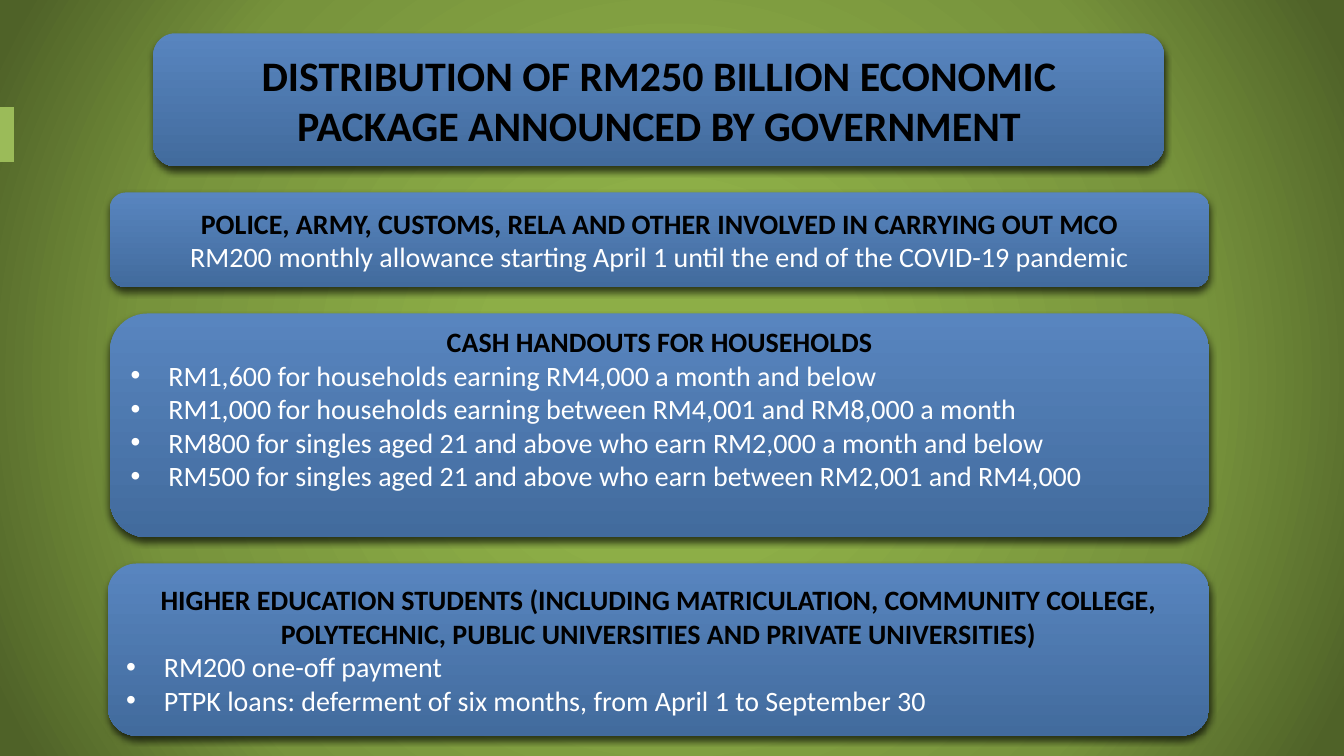
from pptx import Presentation
from pptx.dml.color import RGBColor
from pptx.enum.shapes import MSO_CONNECTOR, MSO_SHAPE
from pptx.enum.text import MSO_ANCHOR, MSO_AUTO_SIZE, PP_ALIGN
from pptx.oxml import parse_xml
from pptx.oxml.ns import nsdecls
from pptx.oxml.xmlchemy import OxmlElement
from pptx.util import Cm, Pt

FONT = "Calibri"
BLACK, WHITE = "000000", "FFFFFF"
PANEL_TOP, PANEL_BOTTOM = "5885BF", "426B9D"
ACCENT = "9BBB59"
GLOW = [(0, "8DAE47"), (23, "8DAE47"), (69, "77933C"), (97, "4F6228")]


def rgb(hex_code):
    return RGBColor.from_string(hex_code)


def paint_background(slide, stops):
    """Fill the slide with a circular gradient spreading from its centre."""
    stop_xml = "".join(
        f'<a:gs pos="{percent * 1000}"><a:srgbClr val="{colour}"/></a:gs>'
        for percent, colour in stops
    )
    slide.element.cSld.insert(0, parse_xml(
        f'<p:bg {nsdecls("p", "a")}><p:bgPr><a:gradFill rotWithShape="1">'
        f'<a:gsLst>{stop_xml}</a:gsLst><a:path path="circle">'
        '<a:fillToRect l="50000" t="50000" r="50000" b="50000"/></a:path>'
        '</a:gradFill><a:effectLst/></p:bgPr></p:bg>'
    ))


def cast_shadow(shape):
    shape.shadow.inherit = False
    effects = shape.element.spPr.find(
        "{http://schemas.openxmlformats.org/drawingml/2006/main}effectLst")
    effects.append(parse_xml(
        f'<a:outerShdw {nsdecls("a")} blurRad="{Pt(5)}" dist="{Pt(3)}" '
        'dir="5400000" rotWithShape="0"><a:srgbClr val="000000">'
        '<a:alpha val="65000"/></a:srgbClr></a:outerShdw>'
    ))


def add_panel(slide, left, top, width, height):
    panel = slide.shapes.add_shape(
        MSO_SHAPE.ROUNDED_RECTANGLE, Cm(left), Cm(top), Cm(width), Cm(height))
    panel.fill.gradient()
    panel.fill.gradient_angle = 270
    for stop, colour in zip(panel.fill.gradient_stops, (PANEL_TOP, PANEL_BOTTOM)):
        stop.color.rgb = rgb(colour)
    panel.line.fill.background()
    cast_shadow(panel)
    return panel


def add_run(paragraph, text, size, colour, bold=False):
    run = paragraph.add_run()
    run.text = text
    run.font.name = FONT
    run.font.size = Pt(size)
    run.font.bold = bold
    run.font.color.rgb = rgb(colour)


def set_bullet(paragraph):
    properties = paragraph._p.get_or_add_pPr()
    properties.set("marL", str(Cm(0.95)))
    properties.set("indent", str(-Cm(0.95)))
    for tag, key, setting in (("a:buFont", "typeface", "Arial"),
                              ("a:buChar", "char", "•")):
        element = OxmlElement(tag)
        element.set(key, setting)
        properties.append(element)


def write_measure(panel, heading, details, bulleted=True):
    """Put a bold heading and its detail lines into a panel."""
    frame = panel.text_frame
    frame.word_wrap = True
    frame.vertical_anchor = MSO_ANCHOR.MIDDLE
    heading_line = frame.paragraphs[0]
    heading_line.alignment = PP_ALIGN.CENTER
    add_run(heading_line, heading, 20, BLACK, bold=True)
    for detail in details:
        detail_line = frame.add_paragraph()
        detail_line.alignment = PP_ALIGN.LEFT if bulleted else PP_ALIGN.CENTER
        if bulleted:
            set_bullet(detail_line)
        add_run(detail_line, detail, 20, WHITE)


def write_title(slide, text):
    banner = add_panel(slide, 3.86, 0.84, 25.48, 3.35)
    title = slide.shapes.title
    title.left, title.top = Cm(5.26), Cm(0.76)
    title.width, title.height = Cm(22.71), Cm(3.51)
    banner.element.addnext(title.element)
    frame = title.text_frame
    frame.word_wrap = True
    frame.auto_size = MSO_AUTO_SIZE.NONE
    frame.vertical_anchor = MSO_ANCHOR.MIDDLE
    frame.paragraphs[0].alignment = PP_ALIGN.CENTER
    add_run(frame.paragraphs[0], text, 30, BLACK, bold=True)


def add_edge_accent(slide):
    accent = slide.shapes.add_connector(
        MSO_CONNECTOR.STRAIGHT, Cm(0.18), Cm(4.09), Cm(0.18), Cm(2.69))
    accent.line.color.rgb = rgb(ACCENT)
    accent.line.width = Pt(10)
    accent.element.spPr.append(OxmlElement("a:effectLst"))


def main():
    deck = Presentation()
    deck.slide_width, deck.slide_height = Cm(33.87), Cm(19.05)
    slide = deck.slides.add_slide(deck.slide_layouts.get_by_name("Title Only"))
    paint_background(slide, GLOW)
    add_edge_accent(slide)
    write_title(slide, "DISTRIBUTION OF RM250 BILLION ECONOMIC "
                       "PACKAGE ANNOUNCED BY GOVERNMENT")

    frontline = add_panel(slide, 2.77, 4.85, 27.71, 2.39)
    write_measure(
        frontline,
        "POLICE, ARMY, CUSTOMS, RELA AND OTHER INVOLVED IN CARRYING OUT MCO",
        ["RM200 monthly allowance starting April 1 until the end of the "
         "COVID-19 pandemic"],
        bulleted=False)

    households = add_panel(slide, 2.77, 7.9, 27.71, 5.64)
    households.text_frame.margin_bottom = Cm(0.98)
    write_measure(households, "CASH HANDOUTS FOR HOUSEHOLDS", [
        "RM1,600 for households earning RM4,000 a month and below",
        "RM1,000 for households earning between RM4,001 and RM8,000 a month",
        "RM800 for singles aged 21 and above who earn RM2,000 a month and below",
        "RM500 for singles aged 21 and above who earn between RM2,001 and RM4,000",
    ])

    students = add_panel(slide, 2.72, 14.2, 27.76, 4.34)
    write_measure(
        students,
        "HIGHER EDUCATION STUDENTS (INCLUDING MATRICULATION, COMMUNITY COLLEGE, "
        "POLYTECHNIC, PUBLIC UNIVERSITIES AND PRIVATE UNIVERSITIES)",
        ["RM200 one-off payment",
         "PTPK loans: deferment of six months, from April 1 to September 30"])

    deck.save("out.pptx")


if __name__ == "__main__":
    main()
